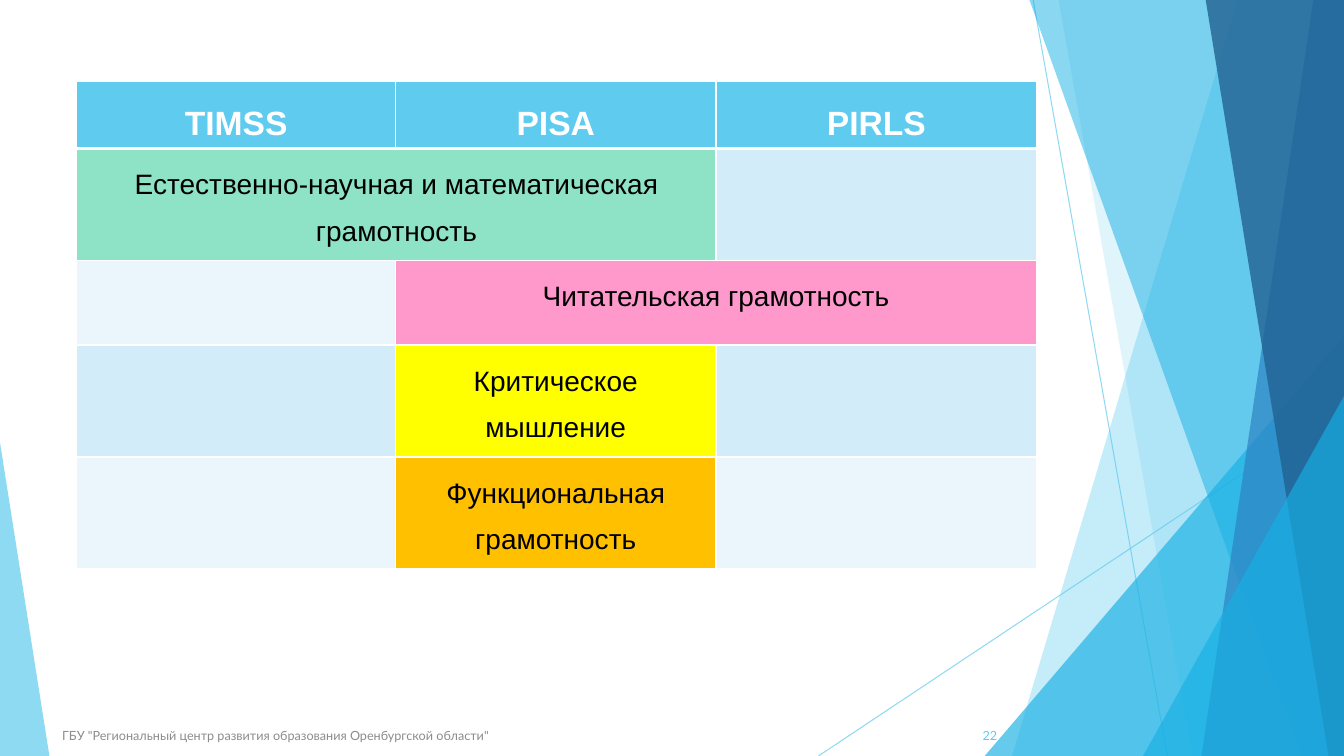
"""Build the slide comparing the TIMSS, PISA and PIRLS assessments."""
from dataclasses import dataclass

from lxml.etree import SubElement
from pptx import Presentation
from pptx.dml.color import RGBColor
from pptx.enum.shapes import MSO_CONNECTOR, MSO_SHAPE
from pptx.enum.text import MSO_ANCHOR, PP_ALIGN
from pptx.oxml import parse_xml
from pptx.oxml.ns import nsdecls, qn
from pptx.util import Pt

WIDTH, HEIGHT = 960, 540
SKY, AZURE, WHITE, BLACK = "5FCBEF", "17B0E4", "FFFFFF", "000000"
BAND_DARK, BAND_LIGHT = "D2ECF9", "EAF6FC"


@dataclass
class Ray:
    start: tuple[float, float]
    end: tuple[float, float]


@dataclass
class Facet:
    top_x: float
    bottom_x: float
    color: str
    opacity: int


@dataclass
class Corner:
    left: float
    top: float
    width: float
    apex: float
    color: str
    opacity: int


@dataclass
class Entry:
    row: int
    column: int
    text: str
    fill: str
    span: int = 1
    size: int = 20
    color: str = BLACK
    bold: bool = False


@dataclass
class FooterPart:
    left: float
    width: float
    text: str
    color: str
    align: PP_ALIGN


RAYS = [Ray((738, 0), (833.8, HEIGHT)), Ray((WIDTH, 290.2), (584.6, HEIGHT))]
DECORATION = [
    Facet(884.2, 722.9, SKY, 36),
    Facet(756, 851.8, SKY, 20),
    Corner(703.4, 239.8, 256.6, 1, AZURE, 66),
    Facet(735.1, 929.5, AZURE, 50),
    Facet(938.2, 858.2, "2E83C3", 70),
    Facet(861.1, 949, "226292", 80),
    Corner(816.5, 283, 143.5, 1, AZURE, 66),
    Corner(0, 316.1, 35.3, 0, SKY, 70),
]
COLUMN_WIDTHS = [227.6, 229, 229]
ROW_HEIGHTS = [48.2, 80, 60.5, 80, 80]
ENTRIES = [
    *(Entry(0, column, study, SKY, size=24, color=WHITE, bold=True)
      for column, study in enumerate(["TIMSS", "PISA", "PIRLS"])),
    Entry(1, 0, "Естественно-научная и математическая грамотность", "8EE3C7", span=2),
    Entry(2, 1, "Читательская грамотность", "FF99CC", span=2),
    Entry(3, 1, "Критическое мышление", "FFFF00"),
    Entry(4, 1, "Функциональная грамотность", "FFC000"),
]
FOOTER = [
    FooterPart(37.4, 496, 'ГБУ "Региональный центр развития образования Оренбургской области"',
               "8C8C8C", PP_ALIGN.LEFT),
    FooterPart(665.3, 54, "22", SKY, PP_ALIGN.RIGHT),
]


def paint(fill, color: str, opacity: int = 100) -> None:
    """Apply a solid hex colour with the given opacity in percent."""
    fill.solid()
    fill.fore_color.rgb = RGBColor.from_string(color)
    if opacity < 100:
        solid = fill._xPr.find(qn("a:solidFill"))
        SubElement(solid[0], qn("a:alpha")).set("val", str(opacity * 1000))


def draw_ray(slide, ray: Ray) -> None:
    """Draw one thin translucent line."""
    connector = slide.shapes.add_connector(
        MSO_CONNECTOR.STRAIGHT, *(Pt(value) for value in ray.start + ray.end))
    connector.line.width = Pt(0.75)
    paint(connector.line.fill, SKY, 70)
    SubElement(connector._element.spPr, qn("a:effectLst"))


def draw_decoration(slide, part: Facet | Corner) -> None:
    """Draw one translucent facet or corner triangle."""
    if isinstance(part, Facet):
        builder = slide.shapes.build_freeform(Pt(part.top_x), Pt(-0.7))
        builder.add_line_segments([(Pt(x), Pt(y)) for x, y in (
            (WIDTH, -0.7), (WIDTH, HEIGHT), (part.bottom_x, HEIGHT))])
        shape = builder.convert_to_shape()
    else:
        shape = slide.shapes.add_shape(
            MSO_SHAPE.ISOSCELES_TRIANGLE, Pt(part.left), Pt(part.top),
            Pt(part.width), Pt(HEIGHT - part.top))
        shape.adjustments[0] = part.apex
    shape.shadow.inherit = False
    shape.line.fill.background()
    paint(shape.fill, part.color, part.opacity)


def format_text(paragraph, font_name: str, size: int, color: str, align: PP_ALIGN) -> None:
    """Set alignment and font of a paragraph."""
    paragraph.alignment = align
    font = paragraph.runs[0].font
    font.name, font.size = font_name, Pt(size)
    paint(font.fill, color)


def add_borders(cell, row: int) -> None:
    """Give a cell white borders, thick below the header."""
    widths = {"L": 1, "R": 1, "T": 3 if row == 1 else 1, "B": 3 if row == 0 else 1}
    properties = cell._tc.get_or_add_tcPr()
    for index, (side, width) in enumerate(widths.items()):
        properties.insert(index, parse_xml(
            f'<a:ln{side} {nsdecls("a")} w="{Pt(width)}"><a:solidFill>'
            f'<a:srgbClr val="{WHITE}"/></a:solidFill></a:ln{side}>'))


def draw_literacy_table(slide) -> None:
    """Draw the table of literacies covered by each study."""
    table = slide.shapes.add_table(
        len(ROW_HEIGHTS), len(COLUMN_WIDTHS), Pt(54.9), Pt(57.8),
        Pt(sum(COLUMN_WIDTHS)), Pt(sum(ROW_HEIGHTS))).table
    for column, width in zip(table.columns, COLUMN_WIDTHS):
        column.width = Pt(width)
    for index, (row, height) in enumerate(zip(table.rows, ROW_HEIGHTS)):
        row.height = Pt(height)
        for cell in row.cells:
            paint(cell.fill, BAND_DARK if index % 2 else BAND_LIGHT)
            add_borders(cell, index)
    for entry in ENTRIES:
        cell = table.cell(entry.row, entry.column)
        if entry.span > 1:
            cell.merge(table.cell(entry.row, entry.column + entry.span - 1))
        paint(cell.fill, entry.fill)
        cell.text_frame.text = entry.text
        paragraph = cell.text_frame.paragraphs[0]
        paragraph.line_spacing = 1.5
        format_text(paragraph, "Arial", entry.size, entry.color, PP_ALIGN.CENTER)
        paragraph.runs[0].font.bold = entry.bold


def draw_footer(slide, part: FooterPart) -> None:
    """Draw one footer text."""
    frame = slide.shapes.add_textbox(
        Pt(part.left), Pt(511.2), Pt(part.width), Pt(28.8)).text_frame
    frame.word_wrap = True
    frame.vertical_anchor = MSO_ANCHOR.MIDDLE
    frame.text = part.text
    format_text(frame.paragraphs[0], "Lato", 9, part.color, part.align)


def main() -> None:
    """Assemble and save the slide."""
    presentation = Presentation()
    presentation.slide_width, presentation.slide_height = Pt(WIDTH), Pt(HEIGHT)
    slide = presentation.slides.add_slide(presentation.slide_layouts[6])
    for ray in RAYS:
        draw_ray(slide, ray)
    for part in DECORATION:
        draw_decoration(slide, part)
    draw_literacy_table(slide)
    for part in FOOTER:
        draw_footer(slide, part)
    presentation.save("out.pptx")


if __name__ == "__main__":
    main()
